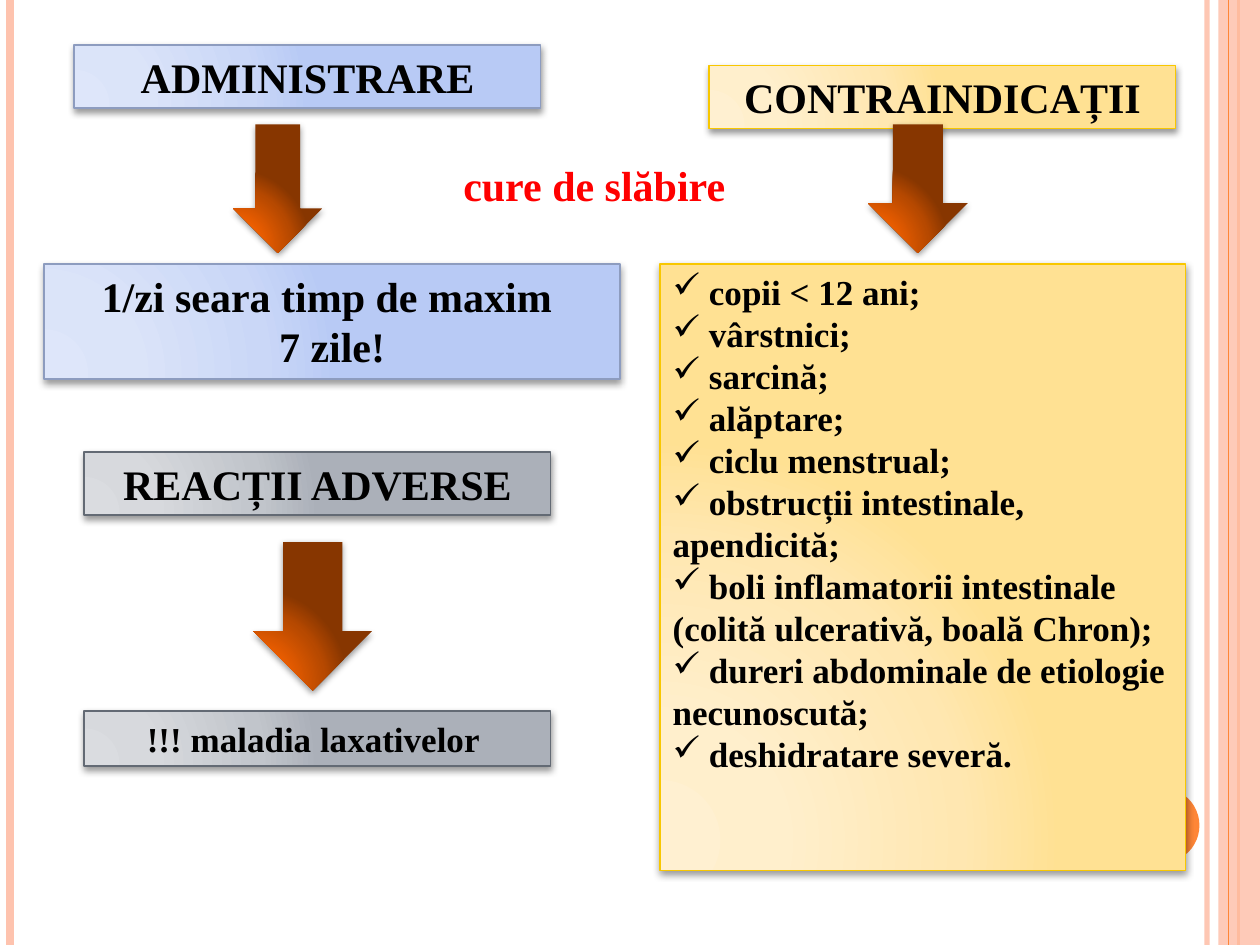
from dataclasses import dataclass

from lxml.etree import SubElement
from pptx import Presentation
from pptx.dml.color import RGBColor
from pptx.enum.shapes import MSO_CONNECTOR, MSO_SHAPE as Preset
from pptx.enum.text import MSO_ANCHOR, MSO_AUTO_SIZE, PP_ALIGN as Align
from pptx.oxml import parse_xml
from pptx.oxml.ns import nsdecls, qn
from pptx.util import Cm, Pt


@dataclass(frozen=True)
class Theme:
    """Holds the colours, font and type sizes of the slide."""
    font: str = "Times New Roman"
    heading: int = 24
    body: int = 20
    text: str = "000000"
    accent: str = "FF0000"
    orange: str = "FE8637"
    peach: str = "FEC3AE"
    blue: tuple = ("DEE6FA", "DBE4F9", "CAD7F7", "B8CAF5")
    blue_edge: str = "8D9CBF"
    yellow: tuple = ("FFF0D1", "FFEFCC", "FFE7B1", "FFE193")
    yellow_edge: str = "F8C700"
    grey: tuple = ("DADCE0", "D7D9DD", "C1C5CB", "ABB0B9")
    grey_edge: str = "636A74"
    rust: tuple = ("FD6400", "F46100", "B74900", "873600")


THEME = Theme()
WIDTH, HEIGHT = 25.4, 19.05
CONTRAINDICATIONS = (
    "copii < 12 ani;",
    "vârstnici;",
    "sarcină;",
    "alăptare;",
    "ciclu menstrual;",
    "obstrucții intestinale, apendicită;",
    "boli inflamatorii intestinale (colită ulcerativă, boală Chron);",
    "dureri abdominale de etiologie necunoscută;",
    "deshidratare severă.",
)


def set_alpha(properties, percent):
    """Make the first colour in the shape properties partly transparent."""
    color = next(properties.iter(qn("a:srgbClr")))
    SubElement(color, qn("a:alpha"), val=str(percent * 1000))


def add_stripe(slide, x, color, weight, alpha=100):
    """Draw a full-height vertical line."""
    stripe = slide.shapes.add_connector(
        MSO_CONNECTOR.STRAIGHT, Cm(x), Cm(0), Cm(x), Cm(HEIGHT))
    stripe.line.color.rgb = RGBColor.from_string(color)
    stripe.line.width = Pt(weight)
    properties = stripe.line._get_or_add_ln().getparent()
    if alpha < 100:
        set_alpha(properties, alpha)
    SubElement(properties, qn("a:effectLst"))


def add_preset(slide, preset, bounds):
    """Add a preset shape without outline or inherited shadow."""
    shape = slide.shapes.add_shape(preset, *map(Cm, bounds))
    shape.shadow.inherit = False
    shape.line.fill.background()
    return shape


def add_flat(slide, preset, bounds, color, alpha=100):
    """Add a shape with one fill colour."""
    shape = add_preset(slide, preset, bounds)
    shape.fill.solid()
    shape.fill.fore_color.rgb = RGBColor.from_string(color)
    if alpha < 100:
        set_alpha(shape.element.spPr, alpha)


def add_glowing(slide, preset, bounds, colors, distance=2.0, opacity=40):
    """Add a shape with a circular gradient and a soft shadow below."""
    shape = add_preset(slide, preset, bounds)
    stops = "".join(
        f'<a:gs pos="{position * 1000}"><a:srgbClr val="{color}"/></a:gs>'
        for position, color in zip((0, 30, 75, 100), colors))
    properties = shape.element.spPr
    properties.insert(2, parse_xml(
        f'<a:gradFill {nsdecls("a")} rotWithShape="1"><a:gsLst>{stops}</a:gsLst>'
        '<a:path path="circle"><a:fillToRect l="5000" t="100000" r="120000" '
        'b="10000"/></a:path></a:gradFill>'))
    properties.find(qn("a:effectLst")).append(parse_xml(
        f'<a:outerShdw {nsdecls("a")} blurRad="{Pt(4)}" dist="{Pt(distance)}" '
        'dir="5400000" rotWithShape="0"><a:srgbClr val="000000">'
        f'<a:alpha val="{opacity * 1000}"/></a:srgbClr></a:outerShdw>'))
    return shape


def add_arrow(slide, *bounds):
    """Add a rust-coloured arrow pointing down."""
    add_glowing(slide, Preset.DOWN_ARROW, bounds, THEME.rust, 1.6, 42)


def write(shape, lines, size, color=THEME.text, align=Align.CENTER, bullet=None):
    """Write bold paragraphs into a shape, with optional bullets."""
    frame = shape.text_frame
    frame.word_wrap = True
    frame.auto_size = MSO_AUTO_SIZE.NONE
    frame.vertical_anchor = MSO_ANCHOR.TOP
    frame.text = "\n".join(lines)
    for paragraph in frame.paragraphs:
        paragraph.alignment = align
        if bullet:
            properties = paragraph._p.get_or_add_pPr()
            SubElement(properties, qn("a:buChar"), char=bullet)
        for run in paragraph.runs:
            run.font.name = THEME.font
            run.font.size = Pt(size)
            run.font.bold = True
            run.font.color.rgb = RGBColor.from_string(color)


def add_box(slide, bounds, colors, edge, lines, size=THEME.heading, **style):
    """Add an outlined gradient box with text."""
    box = add_glowing(slide, Preset.RECTANGLE, bounds, colors)
    box.line.color.rgb = RGBColor.from_string(edge)
    box.line.width = Pt(1)
    write(box, lines, size, **style)


def add_label(slide, bounds, text):
    """Add a free-standing accent label on one line."""
    label = slide.shapes.add_textbox(*map(Cm, bounds))
    write(label, [text], THEME.heading, THEME.accent, Align.LEFT)
    label.text_frame.word_wrap = False


def add_decoration(slide):
    """Add the side stripes, the right band and the disc."""
    add_stripe(slide, 24.33, THEME.peach, 3, 93)
    add_stripe(slide, 0.2, THEME.peach, 4.5)
    add_stripe(slide, 24.97, THEME.orange, 1.5)
    add_flat(slide, Preset.RECTANGLE, (24.56, 0, WIDTH - 24.56, HEIGHT),
             THEME.peach, 87)
    add_stripe(slide, 24.77, THEME.orange, 0.75)
    add_flat(slide, Preset.OVAL, (22.66, 15.88, 1.52, 1.52), THEME.orange)


def main():
    """Build and save the slide."""
    presentation = Presentation()
    presentation.slide_width, presentation.slide_height = Cm(WIDTH), Cm(HEIGHT)
    slide = presentation.slides.add_slide(presentation.slide_layouts[6])
    add_decoration(slide)

    blue = THEME.blue, THEME.blue_edge
    yellow = THEME.yellow, THEME.yellow_edge
    grey = THEME.grey, THEME.grey_edge

    add_box(slide, (1.5, 0.91, 9.4, 1.27), *blue, ["ADMINISTRARE"])
    add_arrow(slide, 4.7, 2.51, 1.8, 2.59)
    add_box(slide, (0.89, 5.33, 11.61, 2.31), *blue,
            ["1/zi seara timp de maxim ", "7 zile!"])

    add_box(slide, (14.3, 1.32, 9.4, 1.27), *yellow, ["CONTRAINDICAȚII"])
    add_box(slide, (13.31, 5.33, 10.59, 12.22), *yellow,
            [f" {item}" for item in CONTRAINDICATIONS], THEME.body,
            align=Align.LEFT, bullet="✓")
    add_arrow(slide, 17.5, 2.51, 2.01, 2.59)

    add_box(slide, (1.7, 9.12, 9.4, 1.27), *grey, ["REACȚII ADVERSE"])
    add_arrow(slide, 5.11, 10.92, 2.39, 3)
    add_box(slide, (1.7, 14.33, 9.4, 1.12), *grey,
            ["!!! maladia laxativelor "], THEME.body)

    add_label(slide, (9.09, 3.1, 5.84, 1.27), "cure de slăbire")
    presentation.save("out.pptx")


if __name__ == "__main__":
    main()
